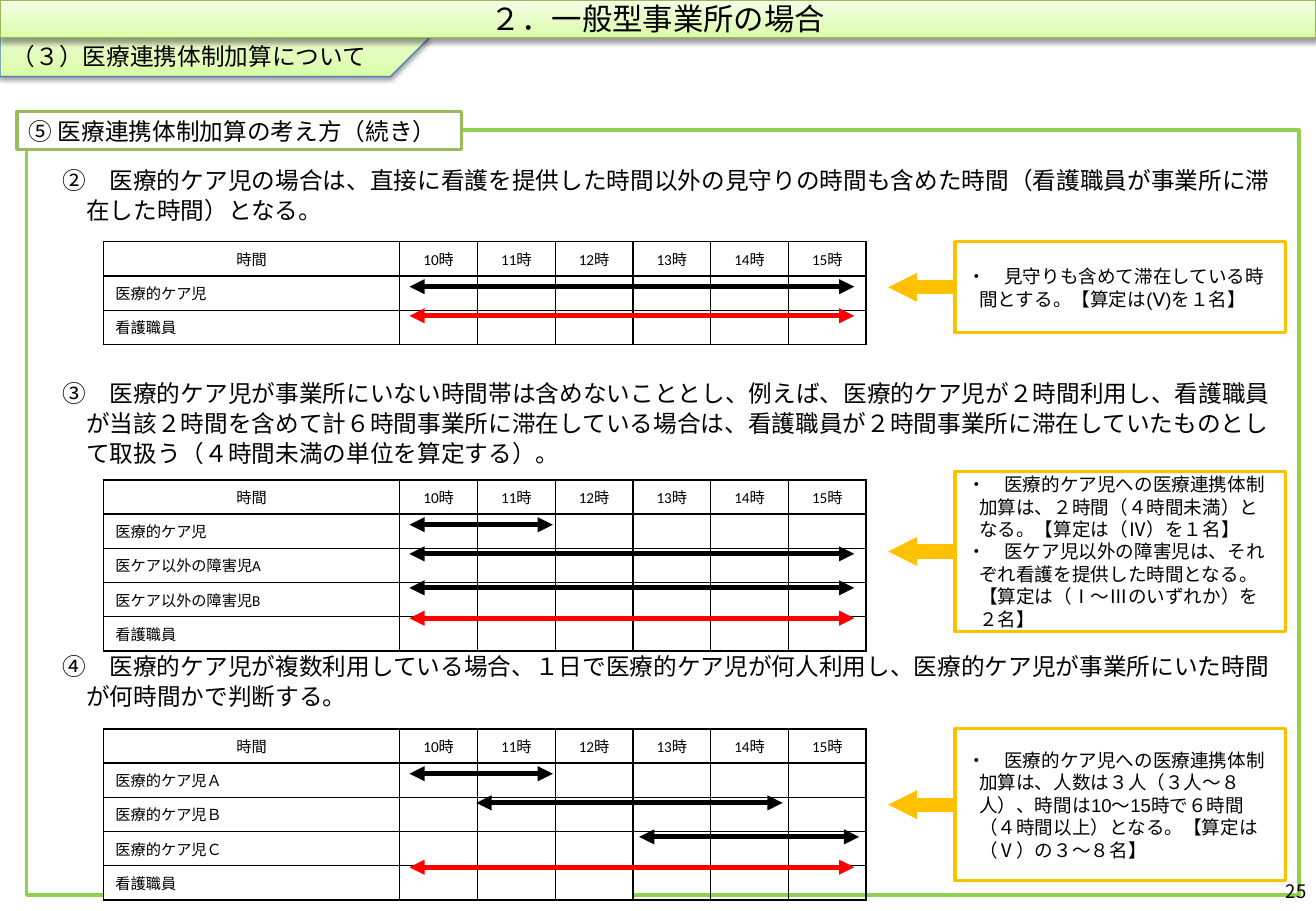
from lxml import etree
from pptx import Presentation
from pptx.dml.color import RGBColor
from pptx.enum.shapes import MSO_CONNECTOR, MSO_SHAPE
from pptx.enum.text import MSO_ANCHOR, MSO_AUTO_SIZE, PP_ALIGN
from pptx.oxml import parse_xml
from pptx.oxml.ns import nsdecls, qn
from pptx.util import Inches, Pt

RECTANGLE, PENTAGON = MSO_SHAPE.RECTANGLE, MSO_SHAPE.PENTAGON
STRAIGHT = MSO_CONNECTOR.STRAIGHT
TOP, MIDDLE, BOTTOM = MSO_ANCHOR.TOP, MSO_ANCHOR.MIDDLE, MSO_ANCHOR.BOTTOM
LEFT, CENTER, RIGHT = PP_ALIGN.LEFT, PP_ALIGN.CENTER, PP_ALIGN.RIGHT

COLORS = {
    "black": "000000", "white": "FFFFFF", "red": "FF0000", "amber": "FFC000",
    "frame": "92D050", "label": "9BBB59", "banner": "98B955",
}
BANNER_STOPS = [(0, "DAFDA7"), (35, "E4FCC2"), (100, "F5FFE7")]
JAPANESE_FONT = "Noto Sans CJK JP"

TITLE = "２．一般型事業所の場合"
HEADING = "（３）医療連携体制加算について"
LABEL = "⑤ 医療連携体制加算の考え方（続き）"
PAGE_NUMBER = "25"
RULES = [
    "　②　医療的ケア児の場合は、直接に看護を提供した時間以外の見守りの時間も含めた時間（看護職員が事業所に滞在した時間）となる。",
    "　③　医療的ケア児が事業所にいない時間帯は含めないこととし、例えば、医療的ケア児が２時間利用し、看護職員が当該２時間を含めて計６時間事業所に滞在している場合は、看護職員が２時間事業所に滞在していたものとして取扱う（４時間未満の単位を算定する）。",
    "　④　医療的ケア児が複数利用している場合、１日で医療的ケア児が何人利用し、医療的ケア児が事業所にいた時間が何時間かで判断する。",
]
RULE_GAPS = [0, 90, 108]
HEADER = ["時間"] + [f"{hour}時" for hour in range(10, 16)]
FULL_DAY, TWO_HOURS = (3.37, 7.03), (3.37, 4.55)
SCHEDULES = [
    {
        "top": 1.99,
        "stays": [("医療的ケア児", FULL_DAY), ("看護職員", FULL_DAY)],
        "callout": (1.99, 0.75),
        "notes": ["・　見守りも含めて滞在している時間とする。【算定は(Ⅴ)を１名】"],
    },
    {
        "top": 3.95,
        "stays": [
            ("医療的ケア児", TWO_HOURS), ("医ケア以外の障害児A", FULL_DAY),
            ("医ケア以外の障害児B", FULL_DAY), ("看護職員", FULL_DAY),
        ],
        "callout": (3.88, 1.32),
        "notes": [
            "・　医療的ケア児への医療連携体制加算は、２時間（４時間未満）となる。【算定は（Ⅳ）を１名】",
            "・　医ケア児以外の障害児は、それぞれ看護を提供した時間となる。【算定は（Ⅰ～Ⅲのいずれか）を２名】",
        ],
    },
    {
        "top": 6.0,
        "stays": [
            ("医療的ケア児Ａ", TWO_HOURS), ("医療的ケア児Ｂ", (3.92, 6.44)),
            ("医療的ケア児Ｃ", (5.26, 7.07)), ("看護職員", FULL_DAY),
        ],
        "callout": (6.0, 1.25),
        "notes": ["・　医療的ケア児への医療連携体制加算は、人数は３人（３人～８人）、時間は10～15時で６時間（４時間以上）となる。【算定は（Ⅴ）の３～８名】"],
    },
]
ARROW_OFFSETS = [0.37, 0.61, 0.89, 1.14]
TABLE_LEFT, NAME_WIDTH, HOUR_WIDTH, ROW_HEIGHT = 0.85, 2.44, 0.64, 0.28
CALLOUT_LEFT, CALLOUT_WIDTH, POINTER_END = 7.86, 2.72, 7.31


def rgb(name):
    return RGBColor.from_string(COLORS[name])


def write_text(frame, texts, size, font=JAPANESE_FONT, align=LEFT, anchor=MIDDLE,
               hanging=0, spacing=None, gaps=None):
    frame.word_wrap = True
    frame.auto_size = MSO_AUTO_SIZE.NONE
    frame.vertical_anchor = anchor
    for index, text in enumerate(texts):
        para = frame.paragraphs[0] if index == 0 else frame.add_paragraph()
        para.alignment = align
        para.space_before = Pt(gaps[index] if gaps else 0)
        if spacing:
            para.line_spacing = Pt(spacing)
        if hanging:
            properties = para._p.get_or_add_pPr()
            properties.set("marL", str(Inches(hanging)))
            properties.set("indent", str(-Inches(hanging)))
        span = para.add_run()
        span.text = text
        span.font.size = Pt(size)
        span.font.bold = False
        span.font.color.rgb = rgb("black")
        span.font.name = font
        etree.SubElement(span.font._element, qn("a:ea"), typeface=JAPANESE_FONT)


def add_box(page, left, top, width, height, line, fill=None, kind=RECTANGLE):
    box = page.shapes.add_shape(kind, *map(Inches, (left, top, width, height)))
    box.shadow.inherit = False
    if fill:
        box.fill.solid()
        box.fill.fore_color.rgb = rgb(fill)
    else:
        box.fill.background()
    box.line.color.rgb = rgb(line)
    box.line.width = Pt(2)
    return box


def style_banner(shape):
    properties = shape.element.spPr
    for tag in ("a:noFill", "a:ln", "a:effectLst"):
        for child in properties.findall(qn(tag)):
            properties.remove(child)
    stops = "".join(
        f'<a:gs pos="{place * 1000}"><a:srgbClr val="{color}"/></a:gs>'
        for place, color in BANNER_STOPS)
    properties.append(parse_xml(
        f'<a:gradFill {nsdecls("a")} rotWithShape="1"><a:gsLst>{stops}</a:gsLst>'
        '<a:lin ang="16200000" scaled="0"/></a:gradFill>'))
    shape.line.color.rgb = rgb("banner")
    shape.line.width = Pt(0.75)
    properties.append(parse_xml(
        f'<a:effectLst {nsdecls("a")}><a:outerShdw blurRad="{Pt(3.1)}" dist="{Pt(1.6)}" '
        'dir="5400000" rotWithShape="0"><a:srgbClr val="000000">'
        '<a:alpha val="38000"/></a:srgbClr></a:outerShdw></a:effectLst>'))


def add_arrow(page, start, end, y, color, width, ends, head_size, source=None):
    arrow = page.shapes.add_connector(
        STRAIGHT, Inches(start), Inches(y), Inches(end), Inches(y))
    if source:
        arrow.begin_connect(source, 1)
    arrow.line.color.rgb = rgb(color)
    arrow.line.width = Pt(width)
    line = arrow.line._get_or_add_ln()
    for end_name in ends:
        etree.SubElement(line, qn(f"a:{end_name}"), type="triangle",
                         w=head_size, len=head_size)
    etree.SubElement(arrow._element.spPr, qn("a:effectLst"))


def add_borders(cell):
    properties = cell._tc.get_or_add_tcPr()
    for side in ("lnL", "lnR", "lnT", "lnB"):
        properties.append(parse_xml(
            f'<a:{side} {nsdecls("a")} w="{Pt(1)}"><a:solidFill>'
            f'<a:srgbClr val="{COLORS["black"]}"/></a:solidFill></a:{side}>'))


def add_schedule(page, top, stays, callout, notes):
    rows = [HEADER] + [[name] + [""] * (len(HEADER) - 1) for name, _ in stays]
    widths = [NAME_WIDTH] + [HOUR_WIDTH] * (len(HEADER) - 1)
    table = page.shapes.add_table(
        len(rows), len(HEADER), Inches(TABLE_LEFT), Inches(top),
        Inches(sum(widths)), Inches(ROW_HEIGHT * len(rows))).table
    table.first_row = table.horz_banding = False
    for column, width in zip(table.columns, widths):
        column.width = Inches(width)
    for row_index, texts in enumerate(rows):
        table.rows[row_index].height = Inches(ROW_HEIGHT)
        for column_index, text in enumerate(texts):
            cell = table.cell(row_index, column_index)
            add_borders(cell)
            if row_index == len(rows) - 1 and column_index > 3:
                cell.fill.background()
            else:
                cell.fill.solid()
                cell.fill.fore_color.rgb = rgb("white")
            if text:
                write_text(cell.text_frame, [text], 9, font="Calibri",
                           align=LEFT if row_index else CENTER, anchor=TOP)
            else:
                etree.SubElement(cell.text_frame.paragraphs[0]._p,
                                 qn("a:endParaRPr"), sz="900")
    for (name, (start, end)), offset in zip(stays, ARROW_OFFSETS):
        color = "red" if name == "看護職員" else "black"
        add_arrow(page, start, end, top + offset, color, 3, ("headEnd", "tailEnd"), "med")
    box_top, box_height = callout
    box = add_box(page, CALLOUT_LEFT, box_top, CALLOUT_WIDTH, box_height, "amber", "white")
    write_text(box.text_frame, notes, 11, font="Arial", hanging=0.1, spacing=13.3)
    add_arrow(page, CALLOUT_LEFT, POINTER_END, box_top + box_height / 2,
              "amber", 8.5, ("tailEnd",), "sm", source=box)


def main():
    deck = Presentation()
    deck.slide_width, deck.slide_height = Inches(10.83), Inches(7.5)
    page = deck.slides.add_slide(deck.slide_layouts[5])

    frame = add_box(page, 0.22, 1.07, 10.47, 6.3, "frame")
    frame.text_frame.margin_top = Inches(0.28)
    write_text(frame.text_frame, RULES, 14, anchor=TOP, hanging=0.39,
               spacing=18, gaps=RULE_GAPS)

    number = page.shapes.add_textbox(Inches(8.32), Inches(7.14), Inches(2.53), Inches(0.4))
    write_text(number.text_frame, [PAGE_NUMBER], 11, align=RIGHT)

    label = add_box(page, 0.14, 0.92, 3.66, 0.31, "label", "white")
    write_text(label.text_frame, [LABEL], 14)

    heading = add_box(page, 0, 0, 3.53, 0.63, "banner", kind=PENTAGON)
    style_banner(heading)
    write_text(heading.text_frame, [HEADING], 14, anchor=BOTTOM)

    title = page.shapes.title
    title.left, title.top = 0, 0
    title.width, title.height = Inches(10.83), Inches(0.31)
    style_banner(title)
    write_text(title.text_frame, [TITLE], 18, align=CENTER)
    heading.element.addnext(title.element)

    for schedule in SCHEDULES:
        add_schedule(page, **schedule)
    deck.save("out.pptx")


if __name__ == "__main__":
    main()
